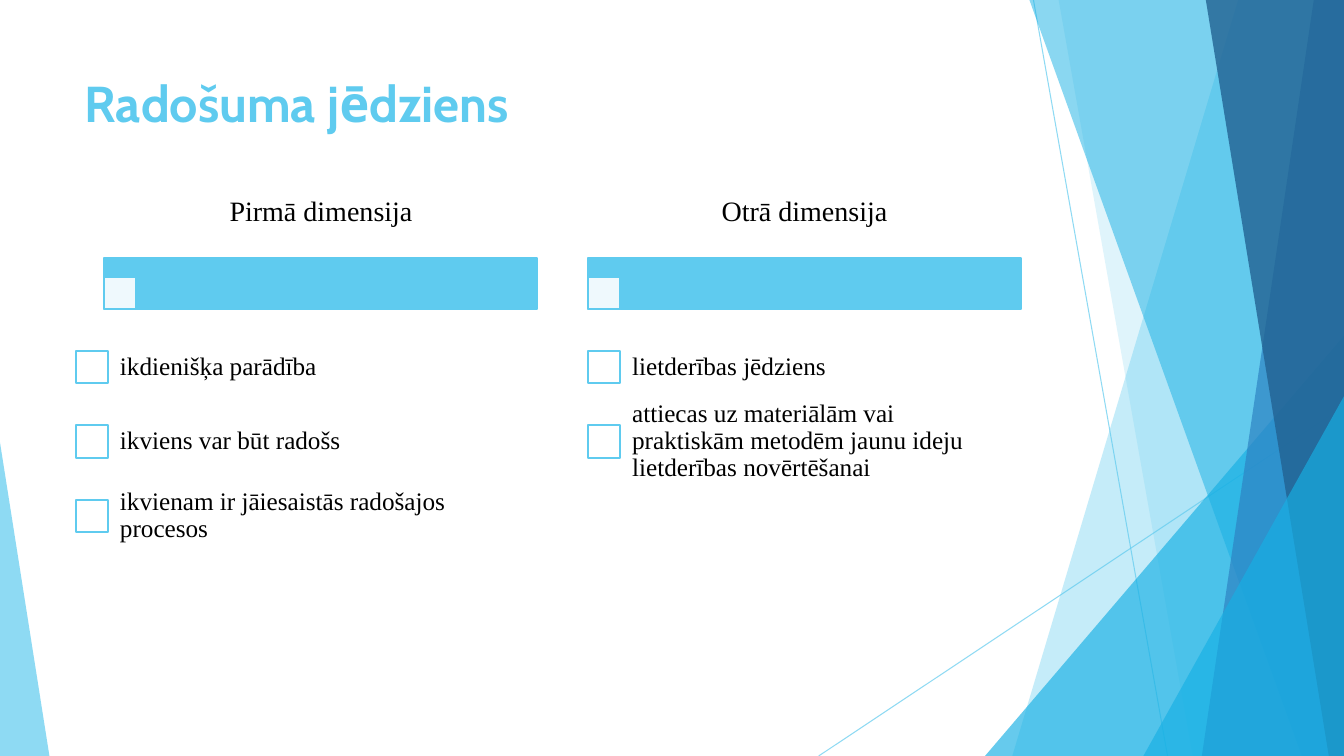
from lxml import etree
from pptx import Presentation
from pptx.dml.color import RGBColor
from pptx.enum.shapes import MSO_CONNECTOR as LINK, MSO_SHAPE as SHAPE
from pptx.enum.text import MSO_ANCHOR as ANCHOR, PP_ALIGN as ALIGN
from pptx.oxml.ns import qn
from pptx.util import Inches, Pt

WIDE, HIGH = 13.33, 7.5
SKY, AZURE, BLUE, NAVY, WHITE = "5FCBEF", "17B0E4", "2E83C3", "226292", "FFFFFF"
SERIF = "Times New Roman"

deck = Presentation()
deck.slide_width, deck.slide_height = Inches(WIDE), Inches(HIGH)
slide = deck.slides.add_slide(deck.slide_layouts[5])
shapes = slide.shapes


def paint(shape, color, alpha=100, edge=None):
    """Fill a shape with a colour at alpha percent, outlined in edge if given."""
    shape.shadow.inherit = False
    shape.fill.solid()
    shape.fill.fore_color.rgb = RGBColor.from_string(color)
    if alpha < 100:
        tint = shape.fill._xPr.find(".//" + qn("a:srgbClr"))
        etree.SubElement(tint, qn("a:alpha"), val=str(alpha * 1000))
    if edge:
        shape.line.color.rgb = RGBColor.from_string(edge)
        shape.line.width = Pt(1.5)
    else:
        shape.line.fill.background()


def write(frame, text, size, font, color, inset, align=ALIGN.LEFT, anchor=ANCHOR.MIDDLE):
    frame.word_wrap = True
    frame.vertical_anchor = anchor
    frame.margin_left = frame.margin_right = Inches(inset[0])
    frame.margin_top = frame.margin_bottom = Inches(inset[1])
    para = frame.paragraphs[0]
    para.alignment = align
    run = para.add_run()
    run.text = text
    run.font.size, run.font.name = Pt(size), font
    run.font.color.rgb = RGBColor.from_string(color)
    return para, run


# Thin lines behind the facets
for ends in ((10.25, 0, 11.58, HIGH), (WIDE, 4.03, 8.12, HIGH)):
    line = shapes.add_connector(LINK.STRAIGHT, *map(Inches, ends))
    line.line.color.rgb = RGBColor.from_string(SKY)
    line.line.width = Pt(0.75)
    tint = line.line.fill._xPr.find(".//" + qn("a:srgbClr"))
    etree.SubElement(tint, qn("a:alpha"), val="70000")
    etree.SubElement(line._element.spPr, qn("a:effectLst"))

# Facets on the right edge, back to front: a band has the x of its top and foot,
# a wedge has its left and top
facets = [
    ("band", 12.28, 10.04, SKY, 36),
    ("band", 10.5, 11.83, SKY, 20),
    ("wedge", 9.77, 3.33, AZURE, 66),
    ("band", 10.21, 12.91, AZURE, 50),
    ("band", 13.03, 11.92, BLUE, 70),
    ("band", 11.96, 13.18, NAVY, 80),
    ("wedge", 11.34, 3.93, AZURE, 66),
]
for kind, one, two, color, alpha in facets:
    if kind == "band":
        pen = shapes.build_freeform(Inches(one), 0)
        rest = ((WIDE, 0), (WIDE, HIGH), (two, HIGH))
        pen.add_line_segments([(Inches(x), Inches(y)) for x, y in rest])
        facet = pen.convert_to_shape()
    else:
        facet = shapes.add_shape(SHAPE.ISOSCELES_TRIANGLE, Inches(one), Inches(two),
                                 Inches(WIDE - one), Inches(HIGH - two))
        facet.adjustments[0] = 1
    paint(facet, color, alpha)

corner = shapes.add_shape(SHAPE.ISOSCELES_TRIANGLE, 0, Inches(4.39), Inches(0.49), Inches(3.11))
corner.adjustments[0] = 0
paint(corner, SKY, 70)

# Title, brought in front of the facets
title = shapes.title
title.left, title.top, title.width, title.height = map(Inches, (0.74, 0.67, 9.4, 1.44))
para, run = write(title.text_frame, "Radošuma jēdziens", 36, "Cabin", SKY, (0.1, 0.05),
                  anchor=ANCHOR.TOP)
run.font.bold = True
shapes._spTree.append(title._element)

# Two columns: left of the list, left of the bar, heading width, heading, items
BAR, BOX, ROW = 4.3, 0.32, 0.74
columns = [
    (0.75, 1.03, 4.87, "Pirmā dimensija",
     ["ikdienišķa parādība", "ikviens var būt radošs",
      "ikvienam ir jāiesaistās radošajos procesos"]),
    (5.83, 5.83, 4.3, "Otrā dimensija",
     ["lietderības jēdziens",
      "attiecas uz materiālām vai praktiskām metodēm jaunu ideju lietderības novērtēšanai"]),
]
for left, bar, wide, head, items in columns:
    blocks = [(bar, 2.56, BAR, 0.51, SKY, 100), (bar, 2.75, BOX, BOX, WHITE, 90)]
    texts = [(left, 1.65, wide, 0.91, head, 20, (0.04, 0.03), ALIGN.CENTER)]
    for i, item in enumerate(items):
        top = 3.27 + i * ROW
        blocks.append((left, top + 0.21, BOX, BOX, WHITE, 100))
        texts.append((left + 0.3, top, 4, ROW, item, 18, (0.14, 0.14), ALIGN.LEFT))
    for *place, color, alpha in blocks:
        block = shapes.add_shape(SHAPE.RECTANGLE, *map(Inches, place))
        paint(block, color, alpha, SKY)
    for *place, text, size, inset, align in texts:
        label = shapes.add_textbox(*map(Inches, place))
        para, run = write(label.text_frame, text, size, SERIF, "000000", inset, align)
        para.line_spacing = 0.9

deck.save("out.pptx")
